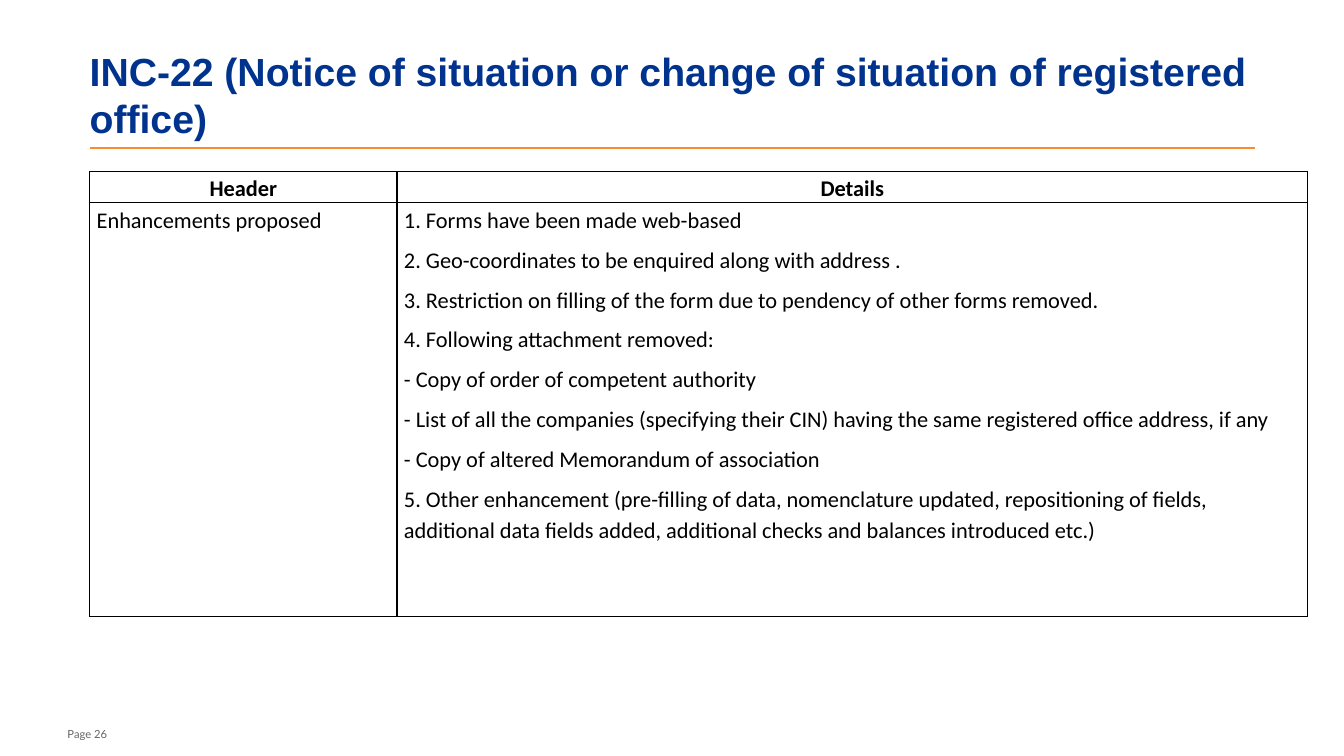
"""Build the INC-22 slide: a ruled title, a table of enhancements and a page label."""
from lxml import etree
from pptx import Presentation
from pptx.dml.color import RGBColor
from pptx.enum.shapes import MSO_CONNECTOR
from pptx.enum.text import MSO_ANCHOR, MSO_AUTO_SIZE, PP_ALIGN
from pptx.oxml import parse_xml
from pptx.oxml.ns import qn
from pptx.util import Pt

LINE = MSO_CONNECTOR.STRAIGHT
MIDDLE, BOTTOM = MSO_ANCHOR.MIDDLE, MSO_ANCHOR.BOTTOM
FIXED = MSO_AUTO_SIZE.NONE
LEFT, CENTER = PP_ALIGN.LEFT, PP_ALIGN.CENTER
PX = 9144
SPACE = "http://schemas.openxmlformats.org/drawingml/2006/main"
ROWS = [
    ["Header", "Details"],
    ["Enhancements proposed", "\n".join([
        "1. Forms have been made web-based",
        "2. Geo-coordinates to be enquired along with address .",
        "3. Restriction on filling of the form due to pendency of other forms removed.",
        "4. Following attachment removed:",
        "- Copy of order of competent authority",
        "- List of all the companies (specifying their CIN) having the same "
        "registered office address, if any",
        "- Copy of altered Memorandum of association",
        "5. Other enhancement (pre-filling of data, nomenclature updated, "
        "repositioning of fields, additional data fields added, additional "
        "checks and balances introduced etc.)",
    ])],
]


def color(code):
    return RGBColor.from_string(code)


def style(font, name, size, code, bold=False):
    font.name, font.size, font.bold = name, Pt(size), bold
    font.color.rgb = color(code)


deck = Presentation()
deck.slide_width, deck.slide_height = 1334 * PX, 750 * PX
slide = deck.slides.add_slide(deck.slide_layouts[5])
shapes = slide.shapes

title = shapes.title
title.left, title.top, title.width, title.height = 89 * PX, 40 * PX, 1154 * PX, 107 * PX
title.text_frame.text = ("INC-22 (Notice of situation or change of situation "
                         "of registered office)")
page = shapes.add_textbox(67 * PX, 713 * PX, 97 * PX, 22 * PX)
page.text_frame.text = "Page 26"
for box, anchor, look in [
    (title, MIDDLE, ("Arial", 28, "00338D", True)),
    (page, BOTTOM, ("Lato", 8, "646464")),
]:
    frame = box.text_frame
    frame.auto_size, frame.word_wrap = FIXED, True
    frame.vertical_anchor = anchor
    frame.margin_left = frame.margin_right = frame.margin_top = frame.margin_bottom = 0
    frame.paragraphs[0].alignment = LEFT
    style(frame.paragraphs[0].font, *look)

rule = shapes.add_connector(LINE, 89 * PX, 147 * PX, 1246 * PX, 147 * PX)
rule.line.color.rgb = color("F68D2E")
rule.line.width = Pt(1)
etree.SubElement(rule._element.spPr, qn("a:effectLst"))

table = shapes.add_table(2, 2, 89 * PX, 170 * PX, 1209 * PX, 441 * PX).table
table.first_row = table.horz_banding = False
for col, width in zip(table.columns, [305, 904]):
    col.width = width * PX
for row, height in zip(table.rows, [31, 410]):
    row.height = height * PX

for r, texts in enumerate(ROWS):
    for c, text in enumerate(texts):
        cell = table.cell(r, c)
        cell.text = text
        cell.margin_left = cell.margin_right = 7 * PX
        cell.margin_top = cell.margin_bottom = 0
        cell.fill.background()
        props = cell._tc.get_or_add_tcPr()
        for i, side in enumerate("LRTB"):
            props.insert(i, parse_xml(
                f'<a:ln{side} xmlns:a="{SPACE}" w="12700"><a:solidFill>'
                f'<a:srgbClr val="000000"/></a:solidFill></a:ln{side}>'))
        for i, para in enumerate(cell.text_frame.paragraphs):
            para.alignment = LEFT if r else CENTER
            para.line_spacing = 1.15
            para.space_before = Pt(6 if i else 0)
            style(para.font, "Calibri", 16, "000000", r == 0)

deck.save("out.pptx")
